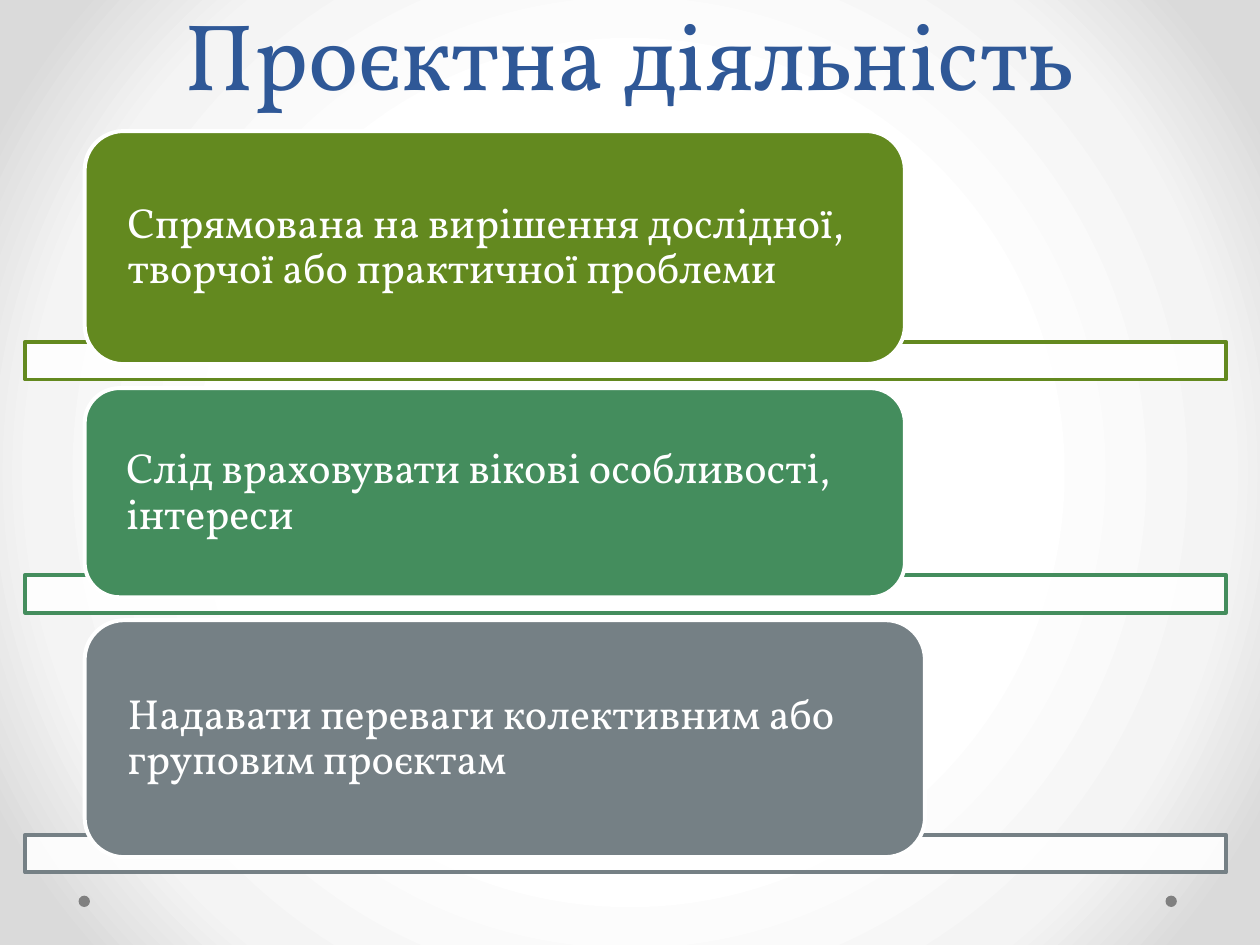
from lxml import etree
from pptx import Presentation
from pptx.dml.color import RGBColor
from pptx.enum.shapes import MSO_SHAPE
from pptx.enum.text import MSO_ANCHOR, PP_ALIGN
from pptx.oxml import parse_xml
from pptx.oxml.ns import qn
from pptx.util import Pt

NS = ('xmlns:a="http://schemas.openxmlformats.org/drawingml/2006/main" '
      'xmlns:p="http://schemas.openxmlformats.org/presentationml/2006/main"')

prs = Presentation()
prs.slide_width, prs.slide_height = Pt(720), Pt(540)
s = prs.slides.add_slide(prs.slide_layouts[6])


def add_box(kind, left, top, width, height, fill, line=None):
    sp = s.shapes.add_shape(kind, Pt(left), Pt(top), Pt(width), Pt(height))
    sp.shadow.inherit = False
    sp.fill.solid()
    sp.fill.fore_color.rgb = RGBColor.from_string(fill)
    if line:
        sp.line.color.rgb = RGBColor.from_string(line)
        sp.line.width = Pt(2.25)
    else:
        sp.line.fill.background()
    return sp


def set_text(sp, text, size, color, align, anchor, spacing, inset_x, inset_y):
    tf = sp.text_frame
    tf.word_wrap = True
    tf.vertical_anchor = anchor
    tf.margin_left = tf.margin_right = Pt(inset_x)
    tf.margin_top = tf.margin_bottom = Pt(inset_y)
    p = tf.paragraphs[0]
    p.alignment = align
    p.line_spacing = spacing
    r = p.add_run()
    r.text = text
    r.font.name = "Vollkorn"
    r.font.size = Pt(size)
    r.font.color.rgb = RGBColor.from_string(color)


# Background: white centre shading to grey corners
stops = "".join(f'<a:gs pos="{pos * 1000}"><a:srgbClr val="{color}"/></a:gs>'
                for pos, color in [(50, "FFFFFF"), (76, "F4F4F4"), (92, "DADADA")])
s.element.find(qn("p:cSld")).insert(0, parse_xml(
    f'<p:bg {NS}><p:bgPr><a:gradFill rotWithShape="1"><a:gsLst>{stops}</a:gsLst>'
    '<a:path path="circle"><a:fillToRect l="50000" t="50000" r="50000" b="50000"/></a:path>'
    '</a:gradFill><a:effectLst/></p:bgPr></p:bg>'))

for left in (666, 44.9):
    add_box(MSO_SHAPE.OVAL, left, 511.8, 6.5, 6.5, "808080")

title = s.shapes.add_textbox(Pt(36), Pt(0), Pt(648), Pt(66.2))
set_text(title, "Проєктна діяльність", size=54, color="2F5897", align=PP_ALIGN.CENTER,
         anchor=MSO_ANCHOR.BOTTOM, spacing=Pt(58), inset_x=7.2, inset_y=3.6)

# Each card overlaps the top of the bar behind it
cards = [
    (74.9, 468.7, 133.2, "63891F",
     "Спрямована на вирішення дослідної, творчої або практичної проблеми"),
    (221.8, 468.7, 119.5, "448D5D", "Слід враховувати вікові особливості, інтереси"),
    (354.4, 480.2, 135.4, "758085", "Надавати переваги колективним або груповим проєктам"),
]
for top, width, height, color, text in cards:
    bar = add_box(MSO_SHAPE.RECTANGLE, 14.4, top + height - 12.8, 686.2, 21.6, "FFFFFF", color)
    white = bar.fill._xPr.find(qn("a:solidFill"))[0]
    etree.SubElement(white, qn("a:alpha"), val="90000")

    card = add_box(MSO_SHAPE.ROUNDED_RECTANGLE, 48.4, top, width, height, color, "FFFFFF")
    set_text(card, text, size=24, color="FFFFFF", align=PP_ALIGN.LEFT,
             anchor=MSO_ANCHOR.MIDDLE, spacing=0.9, inset_x=18, inset_y=0)

prs.save("out.pptx")
